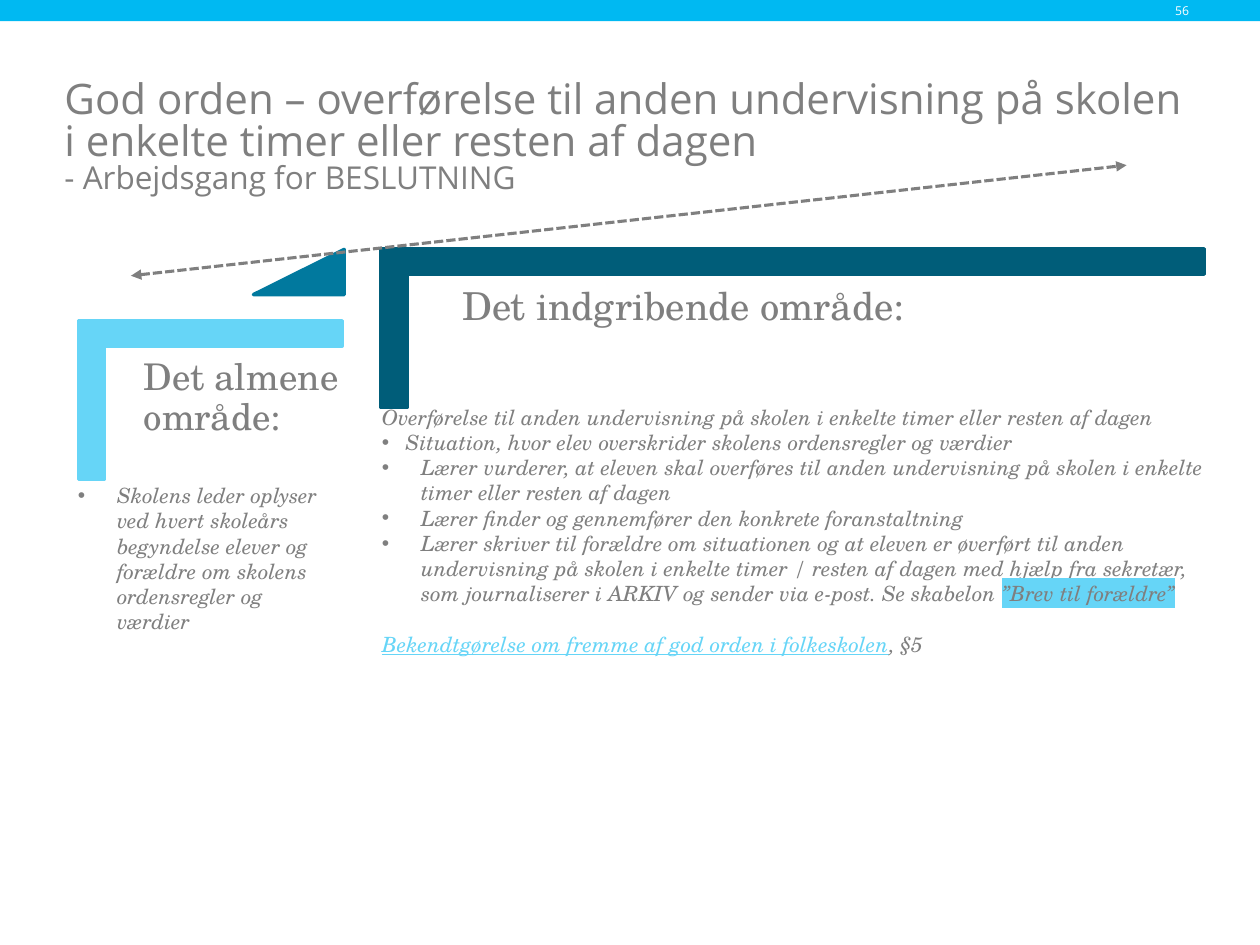
from lxml.etree import SubElement
from pptx import Presentation
from pptx.dml.color import RGBColor
from pptx.enum.dml import MSO_LINE
from pptx.enum.shapes import MSO_CONNECTOR, MSO_SHAPE
from pptx.enum.text import MSO_ANCHOR, MSO_AUTO_SIZE, PP_ALIGN
from pptx.oxml.ns import qn
from pptx.util import Cm, Pt

GREY, SKY, CYAN = "7F7F7F", "66D5F7", "00B9F2"
TEAL, DEEP, WHITE = "01799E", "005D79", "FFFFFF"
SANS, SERIF = "Open Sans", "TeX Gyre Schola"


def color(code):
    """Turn a hex string into a colour."""
    return RGBColor.from_string(code)


class Page:
    """Hold the style and the slide being built."""

    def __init__(self, deck):
        """Add a title-only slide to the deck."""
        self.slide = deck.slides.add_slide(deck.slide_layouts[5])
        self.shapes = self.slide.shapes

    def style(self, run, size, face=SERIF, hue=GREY, slant=False):
        """Set the font of one run."""
        font = run.font
        font.size, font.name, font.italic = Pt(size), face, slant
        font.color.rgb = color(hue)

    def frame(self, shape, inset=0):
        """Give a text frame wrapping, equal insets and a top anchor."""
        frame = shape.text_frame
        frame.word_wrap, frame.auto_size = True, MSO_AUTO_SIZE.NONE
        frame.vertical_anchor = MSO_ANCHOR.TOP
        frame.margin_left = frame.margin_right = Cm(inset)
        frame.margin_top = frame.margin_bottom = Cm(inset)
        return frame

    def title(self, box, text, sizes):
        """Place the title and size each of its paragraphs."""
        shape = self.shapes.title
        shape.left, shape.top, shape.width, shape.height = map(Cm, box)
        frame = self.frame(shape)
        frame.text = text
        for para, size in zip(frame.paragraphs, sizes):
            para.alignment, para.line_spacing = PP_ALIGN.LEFT, 0.83
            self.style(para.runs[0], size, SANS)

    def block(self, kind, box, hue, turn=0, adjust=(), edge=True):
        """Draw a filled preset shape."""
        shape = self.shapes.add_shape(kind, *map(Cm, box))
        shape.shadow.inherit = False
        shape.rotation = turn
        for spot, value in enumerate(adjust):
            shape.adjustments[spot] = value
        shape.fill.solid()
        shape.fill.fore_color.rgb = color(hue)
        if edge:
            shape.line.color.rgb = color(hue)
            shape.line.width = Pt(2)
        else:
            shape.line.fill.background()

    def head(self, box, text, size):
        """Write the heading of an area."""
        frame = self.frame(self.shapes.add_textbox(*map(Cm, box)), 0.23)
        frame.text = text
        frame.paragraphs[0].line_spacing = 0.9
        self.style(frame.paragraphs[0].runs[0], size)

    def body(self, box, items):
        """Write italic paragraphs, bulleted where an indent is given."""
        frame = self.frame(self.shapes.add_textbox(*map(Cm, box)))
        frame.text = "\n".join(text for text, _ in items)
        for para, (_, indent) in zip(frame.paragraphs, items):
            if indent:
                self.bullet(para, indent)
            self.style(para.runs[0], 12, slant=True)
        return frame.paragraphs

    def bullet(self, para, indent):
        """Add a hanging bullet to a paragraph."""
        props = para._p.get_or_add_pPr()
        props.set("marL", str(Cm(indent)))
        props.set("indent", str(-Cm(indent)))
        SubElement(props, qn("a:buFont"), typeface="Arial")
        SubElement(props, qn("a:buChar"), char="•")

    def tail(self, para, text):
        """Append an italic run to a paragraph."""
        run = para.add_run()
        run.text = text
        self.style(run, 12, slant=True)
        return run

    def mark(self, run, hue):
        """Highlight a run."""
        props = run._r.get_or_add_rPr()
        light = SubElement(props, qn("a:highlight"))
        SubElement(light, qn("a:srgbClr"), val=hue)
        props.find(qn("a:latin")).addprevious(light)

    def arrow(self, start, end):
        """Draw a dashed line with a head at both ends."""
        line = self.shapes.add_connector(MSO_CONNECTOR.STRAIGHT, *map(Cm, start + end))
        line.line.color.rgb = color(GREY)
        line.line.width, line.line.dash_style = Pt(1.75), MSO_LINE.SQUARE_DOT
        props = line._element.spPr.get_or_add_ln()
        for tip in ("a:headEnd", "a:tailEnd"):
            SubElement(props, qn(tip), type="triangle")
        SubElement(line._element.spPr, qn("a:effectLst"))

    def number(self, box, text):
        """Write the page number."""
        frame = self.frame(self.shapes.add_textbox(*map(Cm, box)))
        frame.text, frame.vertical_anchor = text, MSO_ANCHOR.MIDDLE
        frame.paragraphs[0].alignment = PP_ALIGN.RIGHT
        self.style(frame.paragraphs[0].runs[0], 7, SANS, WHITE)


def main():
    """Build and save the slide."""
    deck = Presentation()
    deck.slide_width, deck.slide_height = Cm(25.4), Cm(19.05)
    page = Page(deck)
    bend = (0.161, 0.161)
    page.block(MSO_SHAPE.RECTANGLE, (0, 0, 25.4, 0.43), CYAN, edge=False)
    page.title(
        (1.3, 1.63, 22.71, 3.1),
        "God orden – overførelse til anden undervisning på skolen i enkelte timer "
        "eller resten af dagen\n- Arbejdsgang for BESLUTNING",
        (24, 18),
    )
    page.block(MSO_SHAPE.CORNER, (2.64, 5.41, 3.2, 5.31), SKY, 90, bend)
    page.head((2.67, 7.01, 4.65, 4.22), "Det almene område:", 21)
    page.block(MSO_SHAPE.ISOSCELES_TRIANGLE, (5.11, 5.03, 1.83, 0.91), TEAL, adjust=(1,))
    page.block(MSO_SHAPE.CORNER, (14.38, -1.68, 3.2, 16.59), DEEP, 90, bend)
    page.head((9.09, 5.56, 15.19, 4.22), "Det indgribende område:", 22)
    page.arrow((2.64, 5.56), (22.71, 3.33))
    page.body((1.57, 9.73, 5.31, 3.07), [
        ("Skolens leder oplyser ved hvert skoleårs begyndelse elever og forældre "
         "om skolens ordensregler og værdier", 0.79),
    ])
    steps = page.body((7.7, 8.15, 16.99, 6.15), [
        ("Overførelse til anden undervisning på skolen i enkelte timer eller resten af dagen", 0),
        ("Situation, hvor elev overskrider skolens ordensregler og værdier", 0.48),
        ("Lærer vurderer, at eleven skal overføres til anden undervisning på skolen "
         "i enkelte timer eller resten af dagen", 0.79),
        ("Lærer finder og gennemfører den konkrete foranstaltning", 0.79),
        ("Lærer skriver til forældre om situationen og at eleven er øverført til anden "
         "undervisning på skolen i enkelte timer / resten af dagen med hjælp fra sekretær, "
         "som journaliserer i ARKIV og sender via e-post. Se skabelon ", 0.79),
        ("Bekendtgørelse om fremme af god orden i folkeskolen", 0),
    ])
    page.mark(page.tail(steps[4], "”Brev til forældre”"), SKY)
    law = steps[5]
    law.space_before = Pt(14.4)
    law.runs[0].font.underline = True
    law.runs[0].font.color.rgb = color(SKY)
    page.tail(law, ", §5")
    page.number((23.11, 0, 0.86, 0.43), "56")
    deck.save("out.pptx")


if __name__ == "__main__":
    main()
